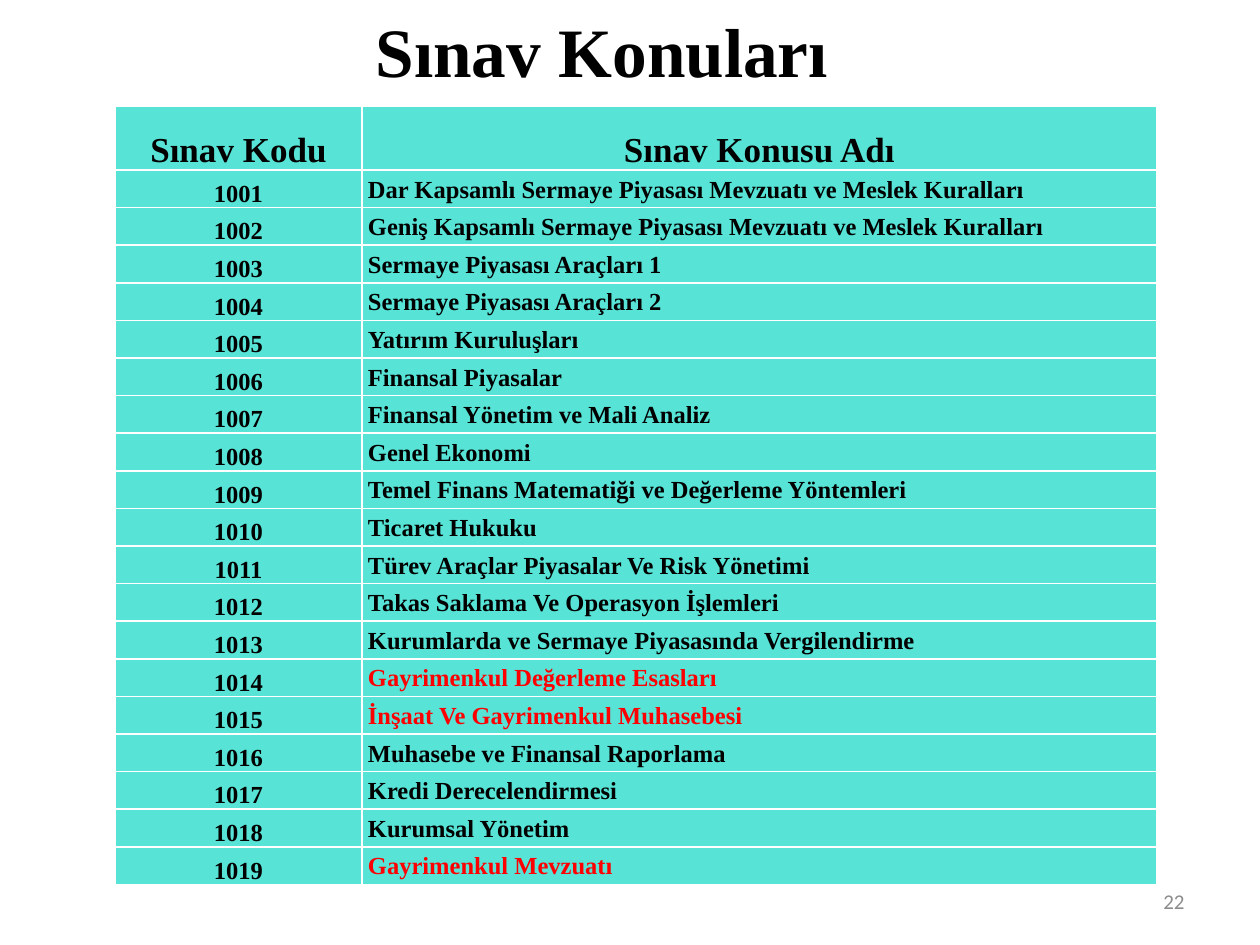
from pptx import Presentation
from pptx.dml.color import RGBColor
from pptx.enum.text import MSO_ANCHOR, MSO_AUTO_SIZE, PP_ALIGN
from pptx.util import Emu, Pt

EMU_PER_PX = 914400 / 126
BLACK, RED, GREY, TURQUOISE = "000000", "FF0000", "8C8C8C", "57E3D6"
SERIF = "Times New Roman"
FIRST_CODE = 1001
HEADINGS = ("Sınav Kodu", "Sınav Konusu Adı")
SUBJECTS = [
    "Dar Kapsamlı Sermaye Piyasası Mevzuatı ve Meslek Kuralları",
    "Geniş Kapsamlı Sermaye Piyasası Mevzuatı ve Meslek Kuralları",
    "Sermaye Piyasası Araçları 1",
    "Sermaye Piyasası Araçları 2",
    "Yatırım Kuruluşları",
    "Finansal Piyasalar",
    "Finansal Yönetim ve Mali Analiz",
    "Genel Ekonomi",
    "Temel Finans Matematiği ve Değerleme Yöntemleri",
    "Ticaret Hukuku",
    "Türev Araçlar Piyasalar Ve Risk Yönetimi",
    "Takas Saklama Ve Operasyon İşlemleri",
    "Kurumlarda ve Sermaye Piyasasında Vergilendirme",
    "Gayrimenkul Değerleme Esasları",
    "İnşaat Ve Gayrimenkul Muhasebesi",
    "Muhasebe ve Finansal Raporlama",
    "Kredi Derecelendirmesi",
    "Kurumsal Yönetim",
    "Gayrimenkul Mevzuatı",
]
RED_CODES = {1014, 1015, 1019}


def px(length):
    return Emu(round(length * EMU_PER_PX))


def write(frame, text, align, size, color, font=SERIF, bold=True):
    """Fill a text frame with one formatted line and return its paragraph."""
    para = frame.paragraphs[0]
    para.alignment = align
    span = para.add_run()
    span.text = text
    for name, value in {"name": font, "size": Pt(size), "bold": bold}.items():
        setattr(span.font, name, value)
    span.font.color.rgb = RGBColor.from_string(color)
    return para


deck = Presentation()
deck.slide_width, deck.slide_height = px(1260), px(945)
page = deck.slides.add_slide(deck.slide_layouts[5])  # title only

# Subject table
rows = [(*HEADINGS, BLACK)]
for code, subject in enumerate(SUBJECTS, FIRST_CODE):
    rows.append((str(code), subject, RED if code in RED_CODES else BLACK))

table = page.shapes.add_table(
    len(rows), 2, px(115), px(106), px(1042), px(779)).table
for column, width in zip(table.columns, (247, 795)):
    column.width = px(width)

cell_format = {"margin_left": px(6), "margin_right": px(6),
               "margin_top": 0, "margin_bottom": 0}
for r, (code, subject, subject_color) in enumerate(rows):
    is_header = r == 0
    table.rows[r].height = px(64 if is_header else 715 / len(SUBJECTS))
    for c, (text, color) in enumerate(((code, BLACK), (subject, subject_color))):
        cell = table.cell(r, c)
        for name, value in cell_format.items():
            setattr(cell, name, value)
        is_subject = c == 1 and not is_header
        cell.vertical_anchor = MSO_ANCHOR.MIDDLE if is_subject else MSO_ANCHOR.BOTTOM
        cell.fill.solid()
        cell.fill.fore_color.rgb = RGBColor.from_string(TURQUOISE)
        align = PP_ALIGN.JUSTIFY if is_subject else PP_ALIGN.CENTER
        para = write(cell.text_frame, text, align, 20 if is_header else 14, color)
        para.line_spacing = 1.07

# Title and page number
title = page.shapes.title
title_place = {"left": px(35), "top": px(10), "width": px(1134), "height": px(80)}
for name, value in title_place.items():
    setattr(title, name, value)
write(title.text_frame, "Sınav Konuları", PP_ALIGN.CENTER, 39.6, BLACK)

number_box = page.shapes.add_textbox(px(903), px(876), px(294), px(50))
write(number_box.text_frame, "22", PP_ALIGN.RIGHT, 12, GREY, "Calibri", False)

for box in (title, number_box):
    frame_format = {"word_wrap": True, "auto_size": MSO_AUTO_SIZE.NONE,
                    "vertical_anchor": MSO_ANCHOR.MIDDLE}
    for name, value in frame_format.items():
        setattr(box.text_frame, name, value)

deck.save("out.pptx")
